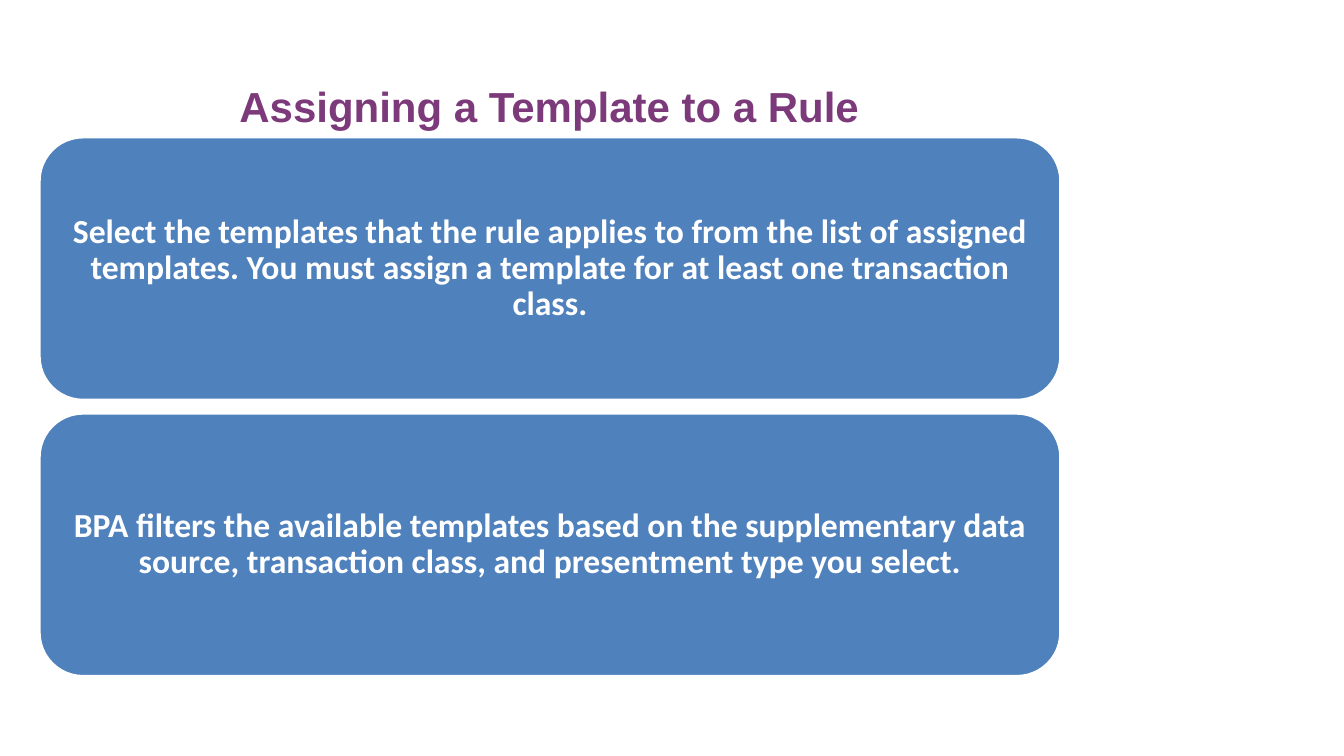
from pptx import Presentation
from pptx import util as u
from pptx.dml.color import RGBColor
from pptx.enum import shapes, text

PURPLE = RGBColor(0x7C, 0x3A, 0x7A)
BLUE = RGBColor(0x4F, 0x81, 0xBD)
WHITE = RGBColor(0xFF, 0xFF, 0xFF)

STEPS = [
    "Select the templates that the rule applies to from the list of assigned "
    "templates. You must assign a template for at least one transaction class.",
    "BPA filters the available templates based on the supplementary data source, "
    "transaction class, and presentment type you select.",
]


class RuleSlide:
    """Holds the current slide and its text style."""

    def __init__(self, slide):
        self.slide = slide

    def set_text(self, shape, content, font_name, size, color, anchor, line_spacing=1.0):
        frame = shape.text_frame
        frame.text = content
        frame.word_wrap = True
        frame.vertical_anchor = anchor
        paragraph = frame.paragraphs[0]
        paragraph.alignment = text.PP_ALIGN.CENTER
        paragraph.line_spacing = line_spacing
        font = paragraph.runs[0].font
        font.name = font_name
        font.size = u.Pt(size)
        font.bold = True
        font.color.rgb = color

    def title(self, content, left, top, width, height):
        box = self.slide.shapes.add_textbox(
            u.Inches(left), u.Inches(top), u.Inches(width), u.Inches(height))
        self.set_text(box, content, "Arial", 30, PURPLE, text.MSO_ANCHOR.BOTTOM)

    def step(self, content, left, top, width, height):
        panel = self.slide.shapes.add_shape(
            shapes.MSO_SHAPE.ROUNDED_RECTANGLE,
            u.Inches(left), u.Inches(top), u.Inches(width), u.Inches(height))
        panel.shadow.inherit = False
        panel.fill.solid()
        panel.fill.fore_color.rgb = BLUE
        panel.line.color.rgb = WHITE
        panel.line.width = u.Pt(2)
        self.set_text(panel, content, "Calibri", 24, WHITE, text.MSO_ANCHOR.MIDDLE, 0.9)


def main():
    presentation = Presentation()
    presentation.slide_width = u.Inches(13.33)
    presentation.slide_height = u.Inches(7.5)
    blank_layout = presentation.slide_layouts[6]
    rule_slide = RuleSlide(presentation.slides.add_slide(blank_layout))

    # Heading
    rule_slide.title("Assigning a Template to a Rule", 0.38, 0.22, 10.14, 1.13)

    # Stacked steps at an equal pitch
    for index, content in enumerate(STEPS):
        rule_slide.step(content, 0.39, 1.36 + index * 2.74, 10.13, 2.61)

    presentation.save("out.pptx")


if __name__ == "__main__":
    main()
